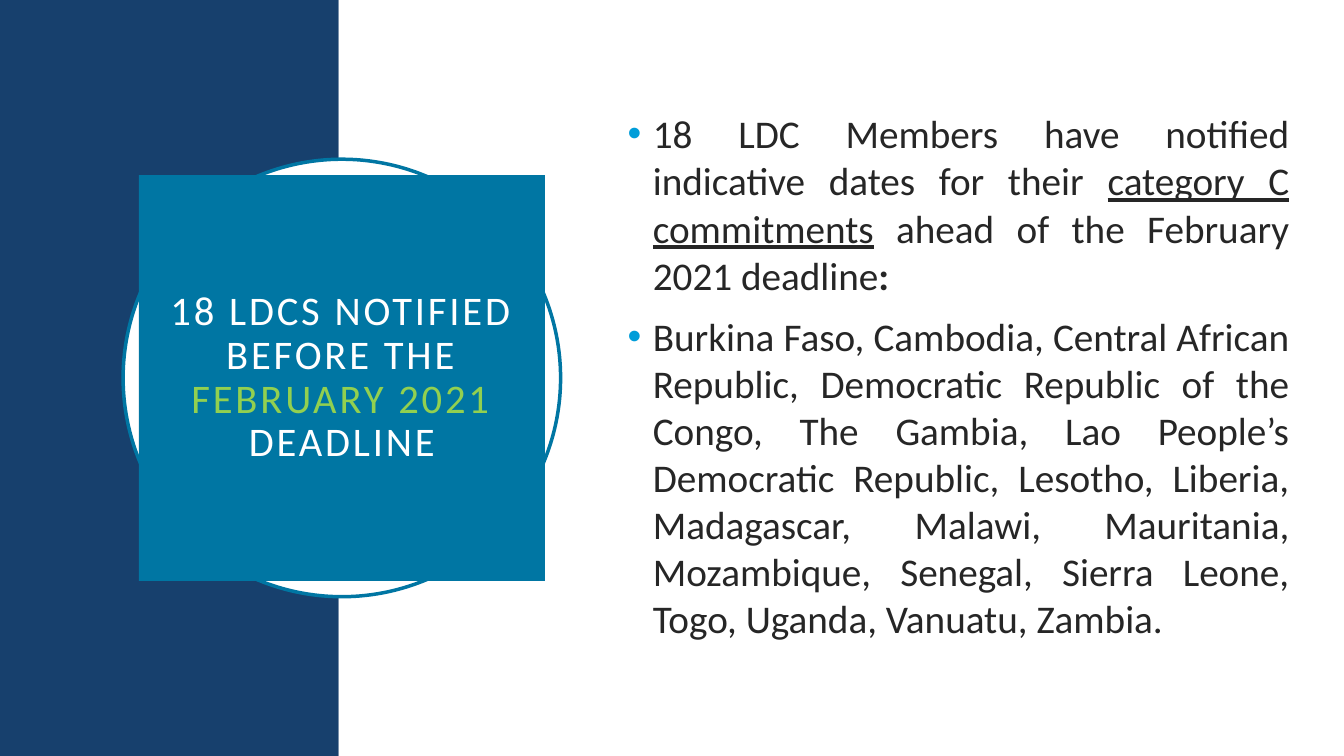
from pptx import Presentation
from pptx.dml.color import RGBColor
from pptx.enum.shapes import MSO_SHAPE as SHAPE
from pptx.enum.text import MSO_ANCHOR as ANCHOR, PP_ALIGN as ALIGN
from pptx.oxml import parse_xml
from pptx.oxml.ns import nsdecls
from pptx.util import Pt

NAVY = RGBColor(0x17, 0x40, 0x6D)
TEAL = RGBColor(0x00, 0x76, 0xA3)
GREEN = RGBColor(0x92, 0xD0, 0x50)
WHITE = RGBColor(0xFF, 0xFF, 0xFF)
INK = RGBColor(0x26, 0x26, 0x26)
BULLET = RGBColor(0x00, 0x9D, 0xD9)

W, H = 960, 540


class SlideBuilder:
    font = "Calibri"

    def __init__(self, slide):
        self.s = slide

    def shape(self, kind, x, y, w, h, fill, line=None):
        sp = self.s.shapes.add_shape(kind, Pt(x), Pt(y), Pt(w), Pt(h))
        sp.shadow.inherit = False
        sp.fill.solid()
        sp.fill.fore_color.rgb = fill
        if line is None:
            sp.line.fill.background()
        else:
            sp.line.color.rgb = line
            sp.line.width = Pt(2.5)
        return sp

    def run(self, p, text, size, color, bold=False, underline=False):
        r = p.add_run()
        r.text = text
        f = r.font
        f.name, f.size, f.bold, f.underline = self.font, Pt(size), bold, underline
        f.color.rgb = color
        return r

    def title(self, sp, parts, size, inset):
        tf = sp.text_frame
        tf.word_wrap = True
        tf.vertical_anchor = ANCHOR.MIDDLE
        tf.margin_left = tf.margin_right = Pt(inset)
        tf.margin_top = tf.margin_bottom = Pt(inset)
        p = tf.paragraphs[0]
        p.alignment = ALIGN.CENTER
        p.line_spacing = 0.9
        for text, color in parts:
            r = self.run(p, text, size, color)
            r.font._element.set("spc", "200")

    def bullets(self, x, y, w, h, items, size):
        tf = self.s.shapes.add_textbox(Pt(x), Pt(y), Pt(w), Pt(h)).text_frame
        tf.word_wrap = True
        tf.vertical_anchor = ANCHOR.MIDDLE
        for i, parts in enumerate(items):
            p = tf.paragraphs[0] if i == 0 else tf.add_paragraph()
            p.alignment = ALIGN.JUSTIFY
            p.space_before = Pt(10)
            self.bullet(p, 18)
            for text, style in parts:
                self.run(p, text, size, INK, **style)

    def bullet(self, p, indent):
        pPr = p._p.get_or_add_pPr()
        pPr.set("marL", str(Pt(indent)))
        pPr.set("indent", str(-Pt(indent)))
        ns = nsdecls("a")
        for xml in (f'<a:buClr {ns}><a:srgbClr val="{BULLET}"/></a:buClr>',
                    f'<a:buFont {ns} typeface="Arial"/>',
                    f'<a:buChar {ns} char="•"/>'):
            pPr.append(parse_xml(xml))


def main():
    prs = Presentation()
    prs.slide_width, prs.slide_height = Pt(W), Pt(H)
    b = SlideBuilder(prs.slides.add_slide(prs.slide_layouts[6]))

    # Background panels
    split = 242
    b.shape(SHAPE.RECTANGLE, 0, 0, split, H, NAVY)
    b.shape(SHAPE.RECTANGLE, split, 0, W - split, H, WHITE)

    # Ring and title square share one centre
    cx, cy, ring, square = 244.2, H / 2, 312.5, 290
    b.shape(SHAPE.OVAL, cx - ring / 2, cy - ring / 2, ring, ring, WHITE, TEAL)
    sp = b.shape(SHAPE.RECTANGLE, cx - square / 2, cy - square / 2,
                 square, square, TEAL)
    b.title(sp, [("18 LDCS NOTIFIED BEFORE THE ", WHITE),
                 ("FEBRUARY 2021 ", GREEN),
                 ("DEADLINE", WHITE)], 29, 14.4)

    # Body
    b.bullets(441.3, 32.5, 486.7, 471.5, [
        [("18 LDC Members have notified indicative dates for their ", {}),
         ("category C commitments", {"underline": True}),
         (" ahead of the February 2021 deadline", {}),
         (":", {"bold": True})],
        [("Burkina Faso, Cambodia, Central African Republic, Democratic "
          "Republic of the Congo, The Gambia, Lao People’s Democratic "
          "Republic, Lesotho, Liberia, Madagascar, Malawi, Mauritania, "
          "Mozambique, Senegal, Sierra Leone, Togo, Uganda, Vanuatu, "
          "Zambia.", {})],
    ], 28)

    prs.save("out.pptx")


if __name__ == "__main__":
    main()
